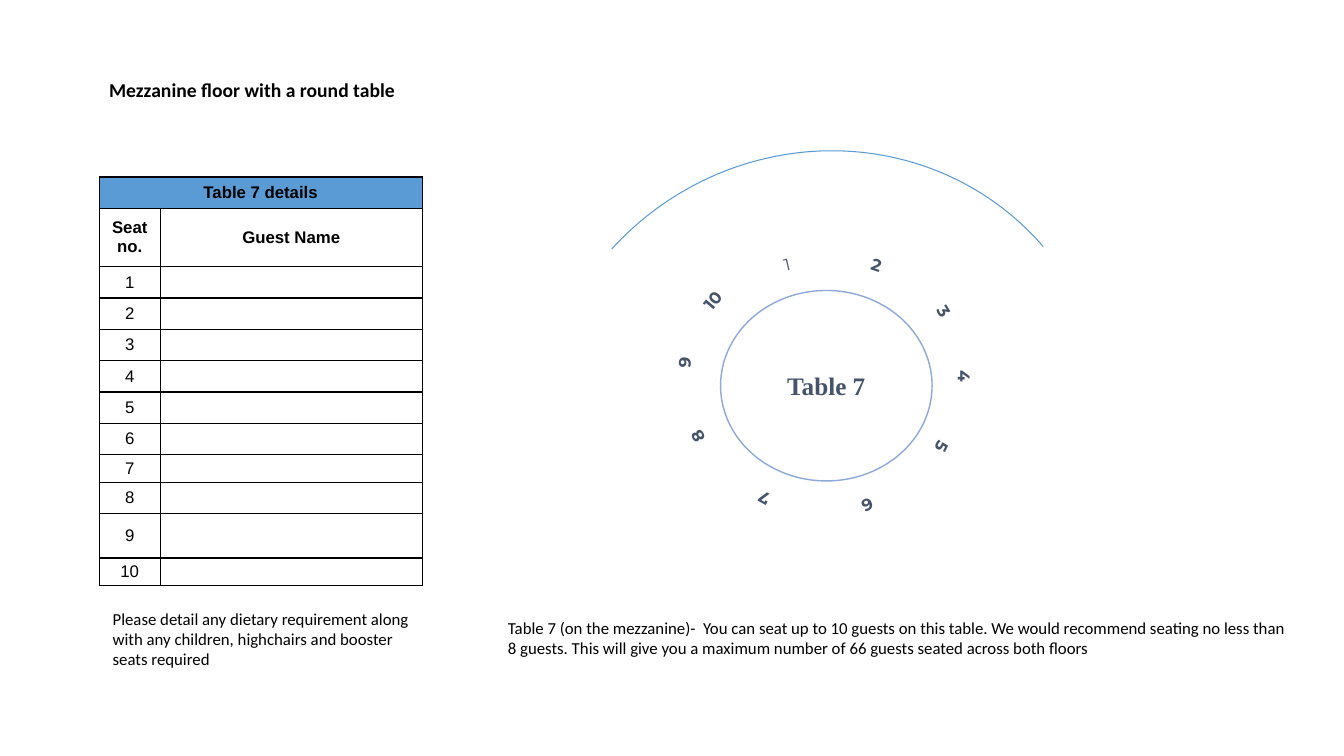
"""Build the seating plan slide for the round table on the mezzanine."""
from lxml import etree
from pptx import Presentation
from pptx.dml import color
from pptx.enum import shapes, text
from pptx.oxml import ns
from pptx.util import Cm, Pt


def rgb(code):
    return color.RGBColor.from_string(code)


def write(frame, words, face, size, ink, bold=False, align=text.PP_ALIGN.LEFT):
    para = frame.paragraphs[0]
    para.text = words
    para.alignment = align
    para.font.name = face
    para.font.size = Pt(size)
    para.font.bold = bold
    para.font.color.rgb = rgb(ink)


BLACK, SLATE, BLUE = "000000", "44546A", "5B9BD5"
MID = text.PP_ALIGN.CENTER

deck = Presentation()
deck.slide_width, deck.slide_height = Cm(33.87), Cm(19.05)
slide = deck.slides.add_slide(deck.slide_layouts[6])

rows = [("Table 7 details", ""), ("Seat no.", "Guest Name")]
rows += [(str(seat), "") for seat in range(1, 11)]
highs = [0.79, 1.47] + [0.79] * 6 + [0.69, 0.79, 1.12, 0.69]
wides = [1.54, 6.6]
grid = slide.shapes.add_table(
    len(rows), 2, Cm(2.5), Cm(4.46), Cm(sum(wides)), Cm(sum(highs))).table
for col, wide in zip(grid.columns, wides):
    col.width = Cm(wide)
for r, (row, high) in enumerate(zip(rows, highs)):
    grid.rows[r].height = Cm(high)
    for c, words in enumerate(row):
        cell = grid.cell(r, c)
        cell.margin_left = cell.margin_right = 0
        cell.margin_top = cell.margin_bottom = 0
        cell.vertical_anchor = text.MSO_ANCHOR.MIDDLE
        write(cell.text_frame, words, "Arial", 12, BLACK, r < 2, MID)
        if not words:
            end = etree.SubElement(cell.text_frame.paragraphs[0]._p, ns.qn("a:endParaRPr"))
            end.set("sz", "1200")
        props = cell._tc.get_or_add_tcPr()
        for side in ("lnL", "lnR", "lnT", "lnB"):
            edge = etree.SubElement(props, ns.qn("a:" + side), w=str(Pt(1)))
            fill = etree.SubElement(edge, ns.qn("a:solidFill"))
            etree.SubElement(fill, ns.qn("a:srgbClr"), val=BLACK)
        if r == 0:
            cell.fill.solid()
            cell.fill.fore_color.rgb = rgb(BLUE)
        else:
            cell.fill.background()
grid.cell(0, 0).merge(grid.cell(0, 1))

ovals = [("Table 7", 18.16, 7.32, 5.33, 4.8, 0)]
seats = [
    (18.87, 5.92, 346.7), (21.13, 5.94, 18.8), (22.83, 7.11, 57.8),
    (23.57, 8.53, 90), (22.78, 10.52, 116), (20.9, 12.0, 157.7),
    (18.52, 11.61, 209.2), (16.84, 10.03, 242.8), (16.51, 8.18, 275.4),
    (17.22, 6.6, 309.8)]
for seat, (left, top, turn) in enumerate(seats, 1):
    wide, high = (1.47, 1.93) if seat in (4, 7, 8, 9, 10) else (1.93, 1.47)
    ovals.append((str(seat), left, top, wide, high, turn))
for words, left, top, wide, high, turn in ovals:
    oval = slide.shapes.add_shape(
        shapes.MSO_SHAPE.OVAL, Cm(left), Cm(top), Cm(wide), Cm(high))
    oval.rotation = turn
    oval.shadow.inherit = False
    oval.fill.background()
    frame = oval.text_frame
    frame.margin_left = frame.margin_right = 0
    frame.margin_top = frame.margin_bottom = 0
    frame.vertical_anchor = text.MSO_ANCHOR.MIDDLE
    if words == "Table 7":
        oval.line.color.rgb = rgb("8DA9DB")
        oval.line.width = Pt(1)
        write(frame, words, "Times New Roman", 18, SLATE, True, MID)
    else:
        oval.line.fill.background()
        write(frame, words, "Montserrat", 12, SLATE, words != "1", MID)

arc = slide.shapes.add_shape(
    shapes.MSO_SHAPE.ARC, Cm(13.36), Cm(3.91), Cm(14.71), Cm(14.2))
arc.adjustments[0] = 157.49
arc.adjustments[1] = 0
arc.rotation = 319.3
arc.shadow.inherit = False
arc.fill.background()
arc.line.color.rgb = rgb(BLUE)
arc.line.width = Pt(0.75)

notes = [
    ("Mezzanine floor with a round table", 2.5, 1.85, 8.84, 0.86, 14, True),
    ("Table 7 (on the mezzanine)-  You can seat up to 10 guests on this table. "
     "We would recommend seating no less than 8 guests. This will give you a "
     "maximum number of 66 guests seated across both floors",
     12.55, 15.44, 20.24, 1.27, 12, False),
    ("Please detail any dietary requirement along with any children, "
     "highchairs and booster seats required", 2.59, 15.21, 8.08, 2.39, 12, False)]
for words, left, top, wide, high, size, bold in notes:
    box = slide.shapes.add_textbox(Cm(left), Cm(top), Cm(wide), Cm(high))
    box.text_frame.word_wrap = True
    write(box.text_frame, words, "Calibri", size, BLACK, bold)

deck.save("out.pptx")
